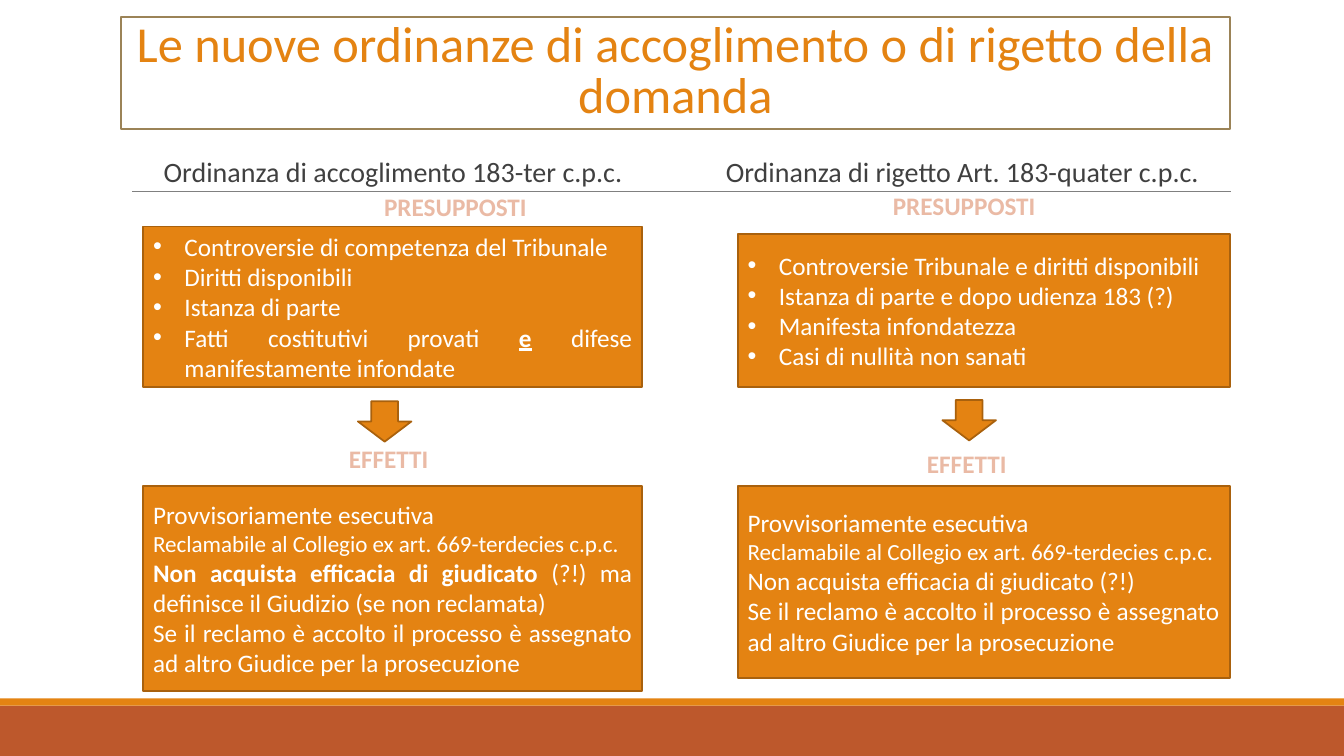
from lxml import etree
from pptx import Presentation
from pptx.dml.color import RGBColor
from pptx.enum.shapes import MSO_CONNECTOR, MSO_SHAPE
from pptx.enum.text import MSO_ANCHOR, PP_ALIGN
from pptx.oxml.ns import qn
from pptx.util import Cm, Pt

RECT, ARROW = MSO_SHAPE.RECTANGLE, MSO_SHAPE.DOWN_ARROW
LINE = MSO_CONNECTOR.STRAIGHT
TOP, MIDDLE, BOTTOM = MSO_ANCHOR.TOP, MSO_ANCHOR.MIDDLE, MSO_ANCHOR.BOTTOM
LEFT, CENTER, JUSTIFY = PP_ALIGN.LEFT, PP_ALIGN.CENTER, PP_ALIGN.JUSTIFY

FONT = "Calibri"
WIDE, HIGH = 33.87, 19.05
COLORS = {
    "white": "FFFFFF", "orange": "E48312", "rust": "BD582C", "edge": "A9610D",
    "tan": "9B8357", "gray": "808080", "dark": "404040", "pink": "EABAA5",
}

RECLAIM = ("Reclamabile al Collegio ex art. 669-terdecies c.p.c.", 16.5)
APPEAL = ("Se il reclamo è accolto il processo è assegnato "
          "ad altro Giudice per la prosecuzione")

# Offsets are in cm from the corner of each column
GRANT = {
    "head": "Ordinanza di accoglimento 183-ter c.p.c.", "inset": 0,
    "cause": (6.38, 0.84), "arrow": (5.97, 6.25), "result": (5.49, 7.19),
    "left": 0.56, "width": 12.57, "top": 1.85, "tall": 5.18,
    "needs": [
        "Controversie di competenza del Tribunale",
        "Diritti disponibili",
        "Istanza di parte",
        ["Fatti costitutivi provati ", ("e", "bu"),
         " difese manifestamente infondate"],
    ],
    "effects": [
        "Provvisoriamente esecutiva",
        [RECLAIM],
        [("Non acquista efficacia di giudicato ", "b"),
         "(?!) ma definisce il Giudizio (se non reclamata)"],
        APPEAL,
    ],
}
REJECT = {
    "head": "Ordinanza di rigetto Art. 183-quater c.p.c.", "inset": 0.25,
    "cause": (4.98, 0.81), "arrow": (6.48, 6.22), "result": (5.84, 7.32),
    "left": 1.32, "width": 12.4, "top": 2.03, "tall": 4.85,
    "needs": [
        "Controversie Tribunale e diritti disponibili",
        "Istanza di parte e dopo udienza 183 (?)",
        "Manifesta infondatezza",
        "Casi di nullità non sanati",
    ],
    "effects": [
        "Provvisoriamente esecutiva",
        [RECLAIM],
        "Non acquista efficacia di giudicato (?!)",
        APPEAL,
    ],
}


def paint(name):
    return RGBColor.from_string(COLORS[name])


def add_form(slide, kind, box, fill, edge=None):
    form = slide.shapes.add_shape(kind, *map(Cm, box))
    form.shadow.inherit = False
    form.fill.solid()
    form.fill.fore_color.rgb = paint(fill)
    if edge:
        form.line.color.rgb = paint(edge)
        form.line.width = Pt(1.25)
    else:
        form.line.fill.background()
    return form


def set_text(form, items, size, color, align, anchor=TOP, bold=False, space=None):
    frame = form.text_frame
    frame.word_wrap = True
    frame.vertical_anchor = anchor
    for i, item in enumerate(items):
        para = frame.add_paragraph() if i else frame.paragraphs[0]
        para.alignment = align
        para.line_spacing = space
        for part in [item] if isinstance(item, str) else item:
            words, style = (part, "") if isinstance(part, str) else part
            run = para.add_run()
            run.text = words
            font = run.font
            font.name = FONT
            font.color.rgb = paint(color)
            font.size = Pt(size if isinstance(style, str) else style)
            marks = style if isinstance(style, str) else ""
            font.bold = bold or "b" in marks
            font.underline = "u" in marks
    return frame


def add_dots(frame):
    for para in frame.paragraphs:
        props = para._p.get_or_add_pPr()
        props.set("marL", str(Cm(0.79)))
        props.set("indent", str(-Cm(0.79)))
        face = etree.SubElement(props, qn("a:buFont"))
        face.set("typeface", "Arial")
        dot = etree.SubElement(props, qn("a:buChar"))
        dot.set("char", "•")


def add_label(slide, x, y, words, width):
    label = slide.shapes.add_textbox(Cm(x), Cm(y), Cm(width), Cm(1.02))
    set_text(label, [words], 18, "pink", LEFT, bold=True)
    label.text_frame.word_wrap = False


def add_base(slide, box):
    x, y, w, h = box
    band = 0.18
    add_form(slide, RECT, (x, y + band, w, h - band), "rust")
    add_form(slide, RECT, (x, y, w, band), "orange")


def add_title(slide, box):
    title = add_form(slide, RECT, box, "white", "tan")
    words = "Le nuove ordinanze di accoglimento o di rigetto della domanda"
    set_text(title, [words], 36, "orange", CENTER, BOTTOM, space=0.85)


def add_rule(slide, x, y, w):
    rule = slide.shapes.add_connector(LINE, Cm(x), Cm(y), Cm(x + w), Cm(y))
    rule.line.color.rgb = paint("gray")
    rule.line.width = Pt(0.5)
    etree.SubElement(rule._element.spPr, qn("a:effectLst"))


def add_column(slide, box, data):
    x, y, w, h = box
    left, width, top = x + data["left"], data["width"], data["top"]

    # Heading
    head = slide.shapes.add_textbox(Cm(x), Cm(y), Cm(w), Cm(1))
    frame = set_text(head, [data["head"]], 20, "dark", CENTER, space=0.9)
    frame.margin_left, frame.margin_right = Cm(data["inset"]), 0

    # Requirements: both boxes end on the same line
    dx, dy = data["cause"]
    add_label(slide, x + dx, y + dy, "PRESUPPOSTI", 4.34)
    needs = add_form(slide, RECT, (left, y + top, width, 5.89 - top),
                     "orange", "edge")
    add_dots(set_text(needs, data["needs"], 18, "white", JUSTIFY, MIDDLE))

    # Arrow
    dx, dy = data["arrow"]
    add_form(slide, ARROW, (x + dx, y + dy, 1.35, 1.02), "orange", "edge")

    # Effects
    dx, dy = data["result"]
    add_label(slide, x + dx, y + dy, "EFFETTI", 2.74)
    effects = add_form(slide, RECT, (left, y + h - 4.04, width, data["tall"]),
                       "orange", "edge")
    set_text(effects, data["effects"], 18, "white", JUSTIFY, MIDDLE)


def main():
    deck = Presentation()
    deck.slide_width, deck.slide_height = Cm(WIDE), Cm(HIGH)
    slide = deck.slides.add_slide(deck.slide_layouts[6])
    add_base(slide, (0, 17.6, WIDE, HIGH - 17.6))
    add_rule(slide, 3.33, 4.83, 27.68)
    add_title(slide, (3.05, 0.43, 27.94, 2.82))
    for x, data in ((3.05, GRANT), (17.27, REJECT)):
        add_column(slide, (x, 3.86, 13.72, 12.42), data)
    deck.save("out.pptx")


if __name__ == "__main__":
    main()
